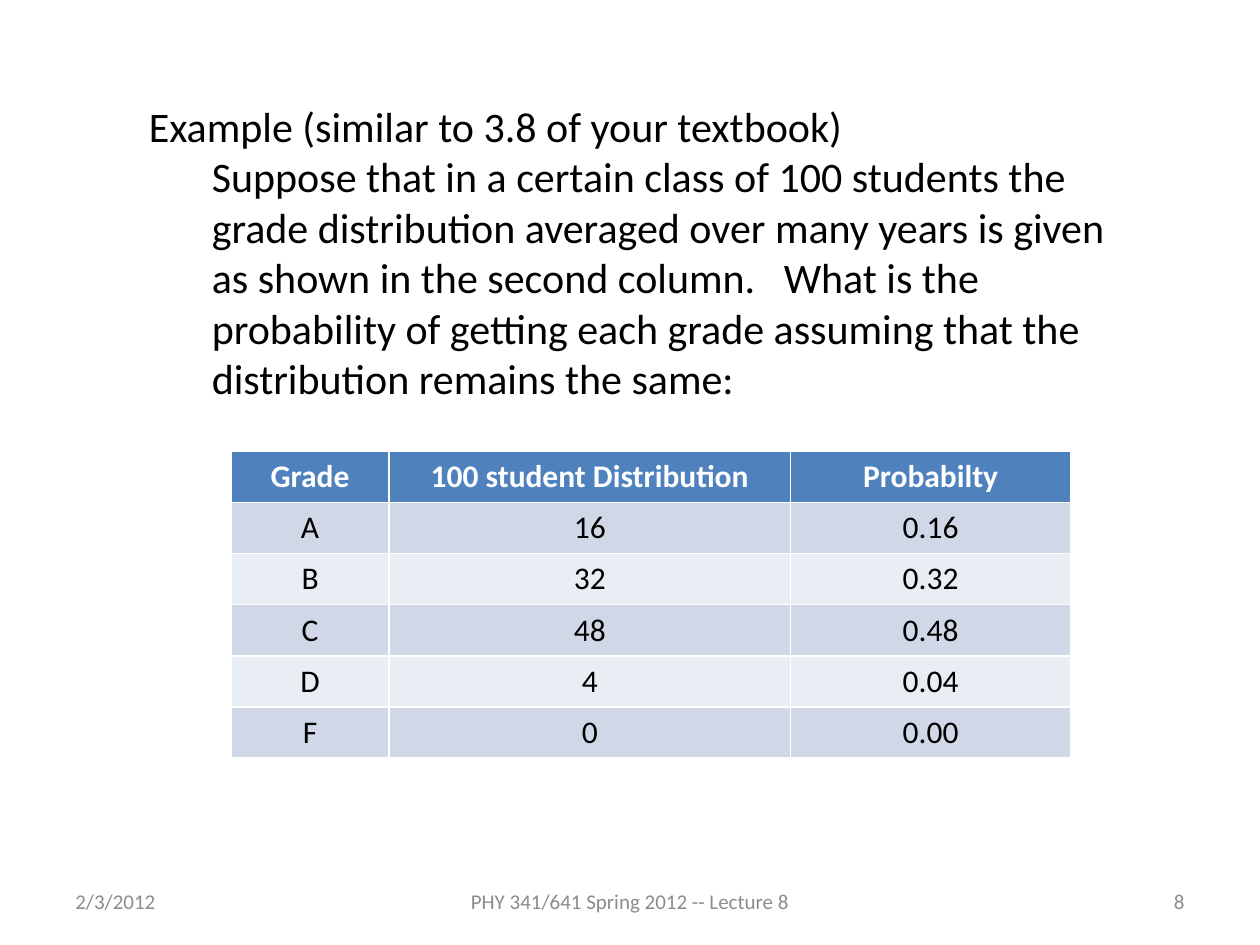
from pptx import Presentation
from pptx.dml.color import RGBColor
from pptx.enum.text import MSO_ANCHOR, MSO_AUTO_SIZE, PP_ALIGN
from pptx.util import Cm, Pt

BLACK = RGBColor(0x00, 0x00, 0x00)
WHITE = RGBColor(0xFF, 0xFF, 0xFF)
GREY = RGBColor(0x8C, 0x8C, 0x8C)
HEADER_BLUE = RGBColor(0x4F, 0x81, 0xBD)
BAND_DARK = RGBColor(0xD0, 0xD8, 0xE8)
BAND_LIGHT = RGBColor(0xE9, 0xED, 0xF4)


def add_run(paragraph, text, size, color, bold=False):
    run = paragraph.add_run()
    run.text = text
    run.font.name = "Calibri"
    run.font.size = Pt(size)
    run.font.bold = bold
    run.font.color.rgb = color


prs = Presentation()
prs.slide_width, prs.slide_height = Cm(25.4), Cm(19.05)
slide = prs.slides.add_slide(prs.slide_layouts[6])

# Footer: date, course and slide number
footer = [
    ("2/3/2012", 1.27, 5.93, PP_ALIGN.LEFT),
    ("PHY 341/641 Spring 2012 -- Lecture 8", 8.68, 8.04, PP_ALIGN.CENTER),
    ("8", 18.2, 5.93, PP_ALIGN.RIGHT),
]
for text, left, width, alignment in footer:
    footer_frame = slide.shapes.add_textbox(Cm(left), Cm(17.66), Cm(width), Cm(1.01)).text_frame
    footer_frame.word_wrap = True
    footer_frame.vertical_anchor = MSO_ANCHOR.MIDDLE
    footer_frame.paragraphs[0].alignment = alignment
    add_run(footer_frame.paragraphs[0], text, 12, GREY)

# Example problem, with the question one level in
example = slide.shapes.add_textbox(Cm(2.75), Cm(1.9), Cm(19.9), Cm(6.4)).text_frame
example.word_wrap = True
example.auto_size = MSO_AUTO_SIZE.SHAPE_TO_FIT_TEXT
add_run(example.paragraphs[0], "Example (similar to 3.8 of your textbook)", 24, BLACK)
question = example.add_paragraph()
question.level = 1
add_run(
    question,
    "Suppose that in a certain class of 100 students the grade distribution "
    "averaged over many years is given as shown in the second column.   "
    "What is the probability of getting each grade assuming that the "
    "distribution remains the same:",
    24, BLACK,
)

# Grade table: each probability is the count out of 100 students
grade_counts = {"A": 16, "B": 32, "C": 48, "D": 4, "F": 0}
rows = [("Grade", "100 student Distribution", "Probabilty")]
rows += [(grade, str(count), f"{count / 100:.2f}") for grade, count in grade_counts.items()]

grades = slide.shapes.add_table(
    len(rows), 3, Cm(4.66), Cm(9.1), Cm(16.92), Cm(6.18)
).table
for column, width in zip(grades.columns, (3.18, 8.1, 5.64)):
    column.width = Cm(width)

for r, values in enumerate(rows):
    is_header = r == 0
    band = HEADER_BLUE if is_header else BAND_DARK if r % 2 else BAND_LIGHT
    grades.rows[r].height = Cm(1.03)
    for c, value in enumerate(values):
        cell = grades.cell(r, c)
        cell.fill.solid()
        cell.fill.fore_color.rgb = band
        paragraph = cell.text_frame.paragraphs[0]
        paragraph.alignment = PP_ALIGN.CENTER
        add_run(paragraph, value, 18, WHITE if is_header else BLACK, is_header)

prs.save("out.pptx")
